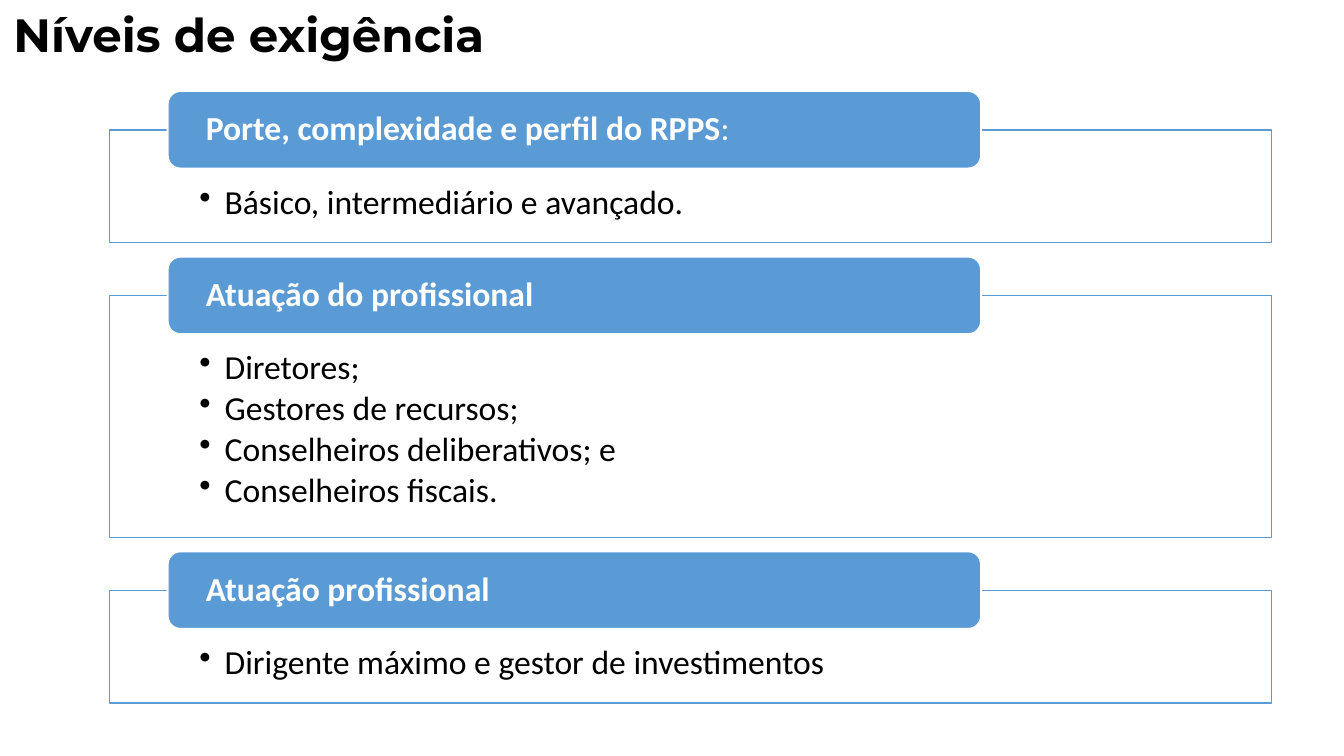
from dataclasses import dataclass

from lxml import etree
from pptx import Presentation
from pptx.dml.color import RGBColor
from pptx.enum.shapes import MSO_SHAPE
from pptx.enum.text import MSO_ANCHOR, PP_ALIGN
from pptx.oxml.ns import qn
from pptx.util import Inches, Pt

RECTANGLE = MSO_SHAPE.RECTANGLE
ROUNDED = MSO_SHAPE.ROUNDED_RECTANGLE
TOP, MIDDLE, BOTTOM = MSO_ANCHOR.TOP, MSO_ANCHOR.MIDDLE, MSO_ANCHOR.BOTTOM
LEFT = PP_ALIGN.LEFT
BLANK_LAYOUT = 6
COLUMNS, ROWS = 160, 90
SLIDE_WIDTH, SLIDE_HEIGHT = Inches(13.33), Inches(7.5)

CARD_LEFT, CARD_WIDTH = 13, 138.4
BADGE_LEFT, BADGE_WIDTH, BADGE_HEIGHT = 19.95, 96.85, 9.25
BADGE_RISE = 4.65
FIRST_CARD_ROW, CARD_GAP = 15.48, 6.3
CARD_PADDING, BULLET_ROWS = 8.3, 5.12


@dataclass(frozen=True)
class Theme:
    ink: RGBColor = RGBColor(0, 0, 0)
    paper: RGBColor = RGBColor(255, 255, 255)
    accent: RGBColor = RGBColor(0x5B, 0x9B, 0xD5)
    title_font: str = "Montserrat"
    body_font: str = "Calibri"
    title_size: float = 33.3
    body_size: float = 24


THEME = Theme()

SECTIONS = [
    ([("Porte, complexidade e perfil do RPPS", True), (":", False)],
     ["Básico, intermediário e avançado."]),
    ([("Atuação do profissional", True)],
     ["Diretores;", "Gestores de recursos;",
      "Conselheiros deliberativos; e", "Conselheiros fiscais."]),
    ([("Atuação profissional", True)],
     ["Dirigente máximo e gestor de investimentos"]),
]


def columns(count):
    return round(SLIDE_WIDTH * count / COLUMNS)


def rows(count):
    return round(SLIDE_HEIGHT * count / ROWS)


def place(left, top, width, height):
    return columns(left), rows(top), columns(width), rows(height)


def add_bullet(para):
    properties = para._p.get_or_add_pPr()
    properties.set("marL", str(columns(3)))
    properties.set("indent", str(-columns(3)))
    etree.SubElement(properties, qn("a:buChar"), char="•")


def write(box, paragraphs, *, color, font=THEME.body_font, size=THEME.body_size,
          anchor=TOP, insets=(0, 0, 0, 0), bullets=False, space_after=0):
    frame = box.text_frame
    frame.word_wrap = True
    frame.vertical_anchor = anchor
    frame.margin_left, frame.margin_right = columns(insets[0]), columns(insets[2])
    frame.margin_top, frame.margin_bottom = rows(insets[1]), rows(insets[3])
    for index, spans in enumerate(paragraphs):
        para = frame.add_paragraph() if index else frame.paragraphs[0]
        para.alignment = LEFT
        if bullets:
            add_bullet(para)
        para.line_spacing = 0.9
        para.space_after = Pt(space_after)
        for text, bold in spans:
            span = para.add_run()
            span.text = text
            span.font.name = font
            span.font.size = Pt(size)
            span.font.bold = bold
            span.font.color.rgb = color


def add_panel(page, preset, position, fill, line, line_width):
    panel = page.shapes.add_shape(preset, *place(*position))
    panel.shadow.inherit = False
    panel.fill.solid()
    panel.fill.fore_color.rgb = fill
    panel.line.color.rgb = line
    panel.line.width = Pt(line_width)
    return panel


def add_title(page, text):
    box = page.shapes.add_textbox(*place(0, 3.1, 123.9, 5.9))
    write(box, [[(text, True)]], color=THEME.ink, font=THEME.title_font,
          size=THEME.title_size, anchor=BOTTOM, insets=(1.6, 1.6, 1.6, 1.6))


def add_section(page, top, height, heading, items):
    card = add_panel(page, RECTANGLE, (CARD_LEFT, top, CARD_WIDTH, height),
                     THEME.paper, THEME.accent, 1)
    write(card, [[(item, False)] for item in items], color=THEME.ink,
          insets=(10.74, 6.56, 10.74, 2.3), bullets=True, space_after=3.2)
    badge = add_panel(page, ROUNDED,
                      (BADGE_LEFT, top - BADGE_RISE, BADGE_WIDTH, BADGE_HEIGHT),
                      THEME.accent, THEME.paper, 1.5)
    write(badge, [heading], color=THEME.paper, anchor=MIDDLE,
          insets=(4.1, 0, 4.1, 0))


def main():
    deck = Presentation()
    deck.slide_width, deck.slide_height = SLIDE_WIDTH, SLIDE_HEIGHT
    page = deck.slides.add_slide(deck.slide_layouts[BLANK_LAYOUT])
    add_title(page, "Níveis de exigência")
    top = FIRST_CARD_ROW
    for heading, items in SECTIONS:
        height = CARD_PADDING + BULLET_ROWS * len(items)
        add_section(page, top, height, heading, items)
        top += height + CARD_GAP
    deck.save("out.pptx")


if __name__ == "__main__":
    main()
